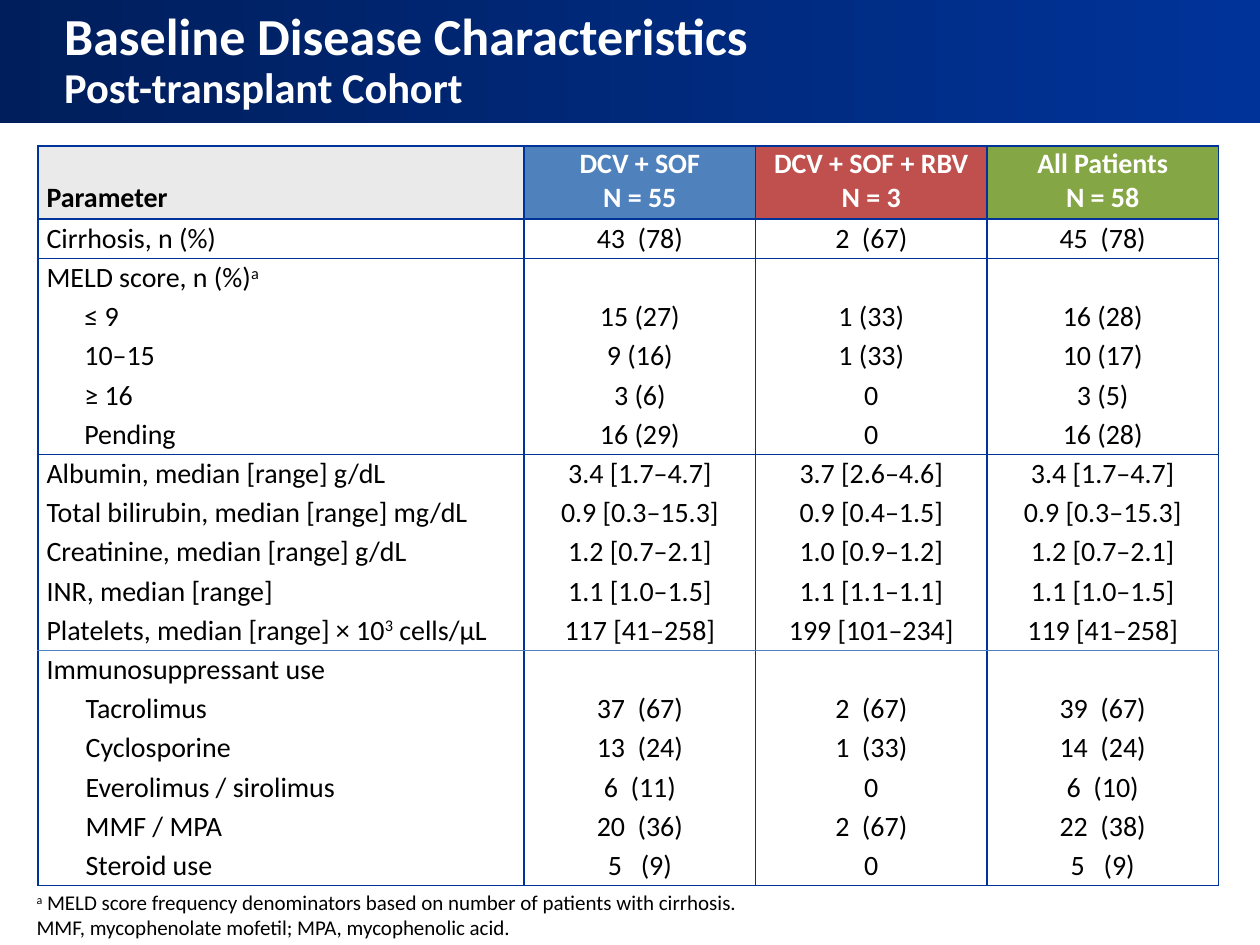
from lxml import etree
from pptx import Presentation, util as u
from pptx.dml.color import RGBColor
from pptx.enum import text
from pptx.oxml.ns import qn

Inches = u.Inches
NAVY, STEEL = "003399", "4F81BD"
HEADINGS = [
    ("Parameter", "EAEAEA", "000000"),
    ("DCV + SOF\nN = 55", STEEL, "FFFFFF"),
    ("DCV + SOF + RBV\nN = 3", "C0504D", "FFFFFF"),
    ("All Patients\nN = 58", "85A644", "FFFFFF"),
]
ROWS = [
    (0, "Cirrhosis, n (%)", "43  (78)", "2  (67)", "45  (78)"),
    (0, "MELD score, n (%)^a", "", "", ""),
    (0.3, "≤ 9", "15 (27)", "1 (33)", "16 (28)"),
    (0.3, "10–15", "9 (16)", "1 (33)", "10 (17)"),
    (0.3, "≥ 16", "3 (6)", "0", "3 (5)"),
    (0.3, "Pending", "16 (29)", "0", "16 (28)"),
    (0, "Albumin, median [range] g/dL", "3.4 [1.7–4.7]", "3.7 [2.6–4.6]", "3.4 [1.7–4.7]"),
    (0, "Total bilirubin, median [range] mg/dL", "0.9 [0.3–15.3]", "0.9 [0.4–1.5]", "0.9 [0.3–15.3]"),
    (0, "Creatinine, median [range] g/dL", "1.2 [0.7–2.1]", "1.0 [0.9–1.2]", "1.2 [0.7–2.1]"),
    (0, "INR, median [range]", "1.1 [1.0–1.5]", "1.1 [1.1–1.1]", "1.1 [1.0–1.5]"),
    (0, "Platelets, median [range] × 10^3^ cells/µL", "117 [41–258]", "199 [101–234]", "119 [41–258]"),
    (0, "Immunosuppressant use", "", "", ""),
    (0.31, "Tacrolimus", "37  (67)", "2  (67)", "39  (67)"),
    (0.31, "Cyclosporine", "13  (24)", "1  (33)", "14  (24)"),
    (0.31, "Everolimus / sirolimus", "6  (11)", "0", "6  (10)"),
    (0.31, "MMF / MPA", "20  (36)", "2  (67)", "22  (38)"),
    (0.31, "Steroid use", "5   (9)", "0", "5   (9)"),
]
RULES_BELOW = {-1: NAVY, 0: NAVY, 1: NAVY, 6: NAVY, 11: STEEL, 17: NAVY}


def color(value):
    return RGBColor.from_string(value)


def style(font, size, value, bold=False):
    font.name, font.size, font.bold = "Calibri", u.Pt(size), bold
    font.color.rgb = color(value)


def place(shape, box):
    shape.left, shape.top, shape.width, shape.height = map(Inches, box)


def set_margins(target, left, top, right, bottom):
    target.margin_left, target.margin_top = Inches(left), Inches(top)
    target.margin_right, target.margin_bottom = Inches(right), Inches(bottom)


def write(frame, content, size, value, bold=False, align=None):
    for index, line in enumerate(content.split("\n")):
        para = frame.add_paragraph() if index else frame.paragraphs[0]
        para.alignment = align
        style(para.font, size, value, bold)
        for part, words in enumerate(line.split("^")):
            if words:
                span = para.add_run()
                span.text = words
                if part % 2:
                    span._r.get_or_add_rPr().set("baseline", "30000")


def set_borders(cell, left, right, top, bottom):
    props = cell._tc.get_or_add_tcPr()
    sides = {"L": left, "R": right, "T": top, "B": bottom}
    for index, (side, value) in enumerate(sides.items()):
        line = etree.Element(qn(f"a:ln{side}"), w=str(u.Pt(1)))
        if value:
            fill = etree.SubElement(line, qn("a:solidFill"))
            etree.SubElement(fill, qn("a:srgbClr"), val=value)
        else:
            etree.SubElement(line, qn("a:noFill"))
        props.insert(index, line)


def add_title(page, box):
    title = page.shapes.title
    place(title, box)
    title.fill.gradient()
    title.fill.gradient_angle = 0
    for stop, value in zip(title.fill.gradient_stops, ("001E5B", NAVY)):
        stop.color.rgb = color(value)
    frame = title.text_frame
    frame.word_wrap = True
    frame.auto_size = text.MSO_AUTO_SIZE.NONE
    frame.vertical_anchor = text.MSO_ANCHOR.MIDDLE
    set_margins(frame, 0.51, 0.05, 0.43, 0.05)
    para = frame.paragraphs[0]
    para.alignment = text.PP_ALIGN.LEFT
    para.line_spacing = 0.9
    for index, (words, size) in enumerate(
        [("Baseline Disease Characteristics", 29.7), ("Post-transplant Cohort", 24.3)]
    ):
        if index:
            para.add_line_break()
        span = para.add_run()
        span.text = words
        style(span.font, size, "FFFFFF", True)


def add_table(page, box):
    left, top, width, height = box
    label_width, head_height = 3.86, 0.58
    frame = page.shapes.add_table(len(ROWS) + 1, len(HEADINGS), *map(Inches, box))
    table = frame.table
    table.first_row = table.horz_banding = False
    for index, column in enumerate(table.columns):
        column.width = Inches((width - label_width) / 3 if index else label_width)
    for index, row in enumerate(table.rows):
        row.height = Inches((height - head_height) / len(ROWS) if index else head_height)

    for row in range(len(ROWS) + 1):
        for column, (heading, fill, ink) in enumerate(HEADINGS):
            cell = table.cell(row, column)
            head = row == 0
            content = heading if head else ROWS[row - 1][column + 1]
            align = text.PP_ALIGN.CENTER if column else text.PP_ALIGN.LEFT
            cell.fill.solid()
            cell.fill.fore_color.rgb = color(fill if head else "FFFFFF")
            cell.vertical_anchor = text.MSO_ANCHOR.BOTTOM if head else text.MSO_ANCHOR.MIDDLE
            indent = 0 if head or column else ROWS[row - 1][0]
            set_margins(cell, 0.07 + indent, 0, 0.07, 0.03 if head else 0)
            write(cell.text_frame, content, 16, ink if head else "000000", head, align)
            set_borders(cell, NAVY, NAVY, RULES_BELOW.get(row - 1), RULES_BELOW.get(row))


def add_footnote(page, box):
    frame = page.shapes.add_textbox(*map(Inches, box)).text_frame
    frame.word_wrap = True
    frame.vertical_anchor = text.MSO_ANCHOR.BOTTOM
    set_margins(frame, 0, 0, 0, 0)
    notes = (
        "^a^ MELD score frequency denominators based on number of patients with cirrhosis.\n"
        "MMF, mycophenolate mofetil; MPA, mycophenolic acid."
    )
    write(frame, notes, 12, "000000")


def main():
    deck = Presentation()
    deck.slide_width, deck.slide_height = Inches(10), Inches(7.5)
    page = deck.slides.add_slide(deck.slide_layouts[5])
    add_title(page, (0, 0, 10, 0.98))
    add_table(page, (0.3, 1.16, 9.37, 5.87))
    add_footnote(page, (0.29, 7.06, 6.24, 0.4))
    deck.save("out.pptx")


if __name__ == "__main__":
    main()
